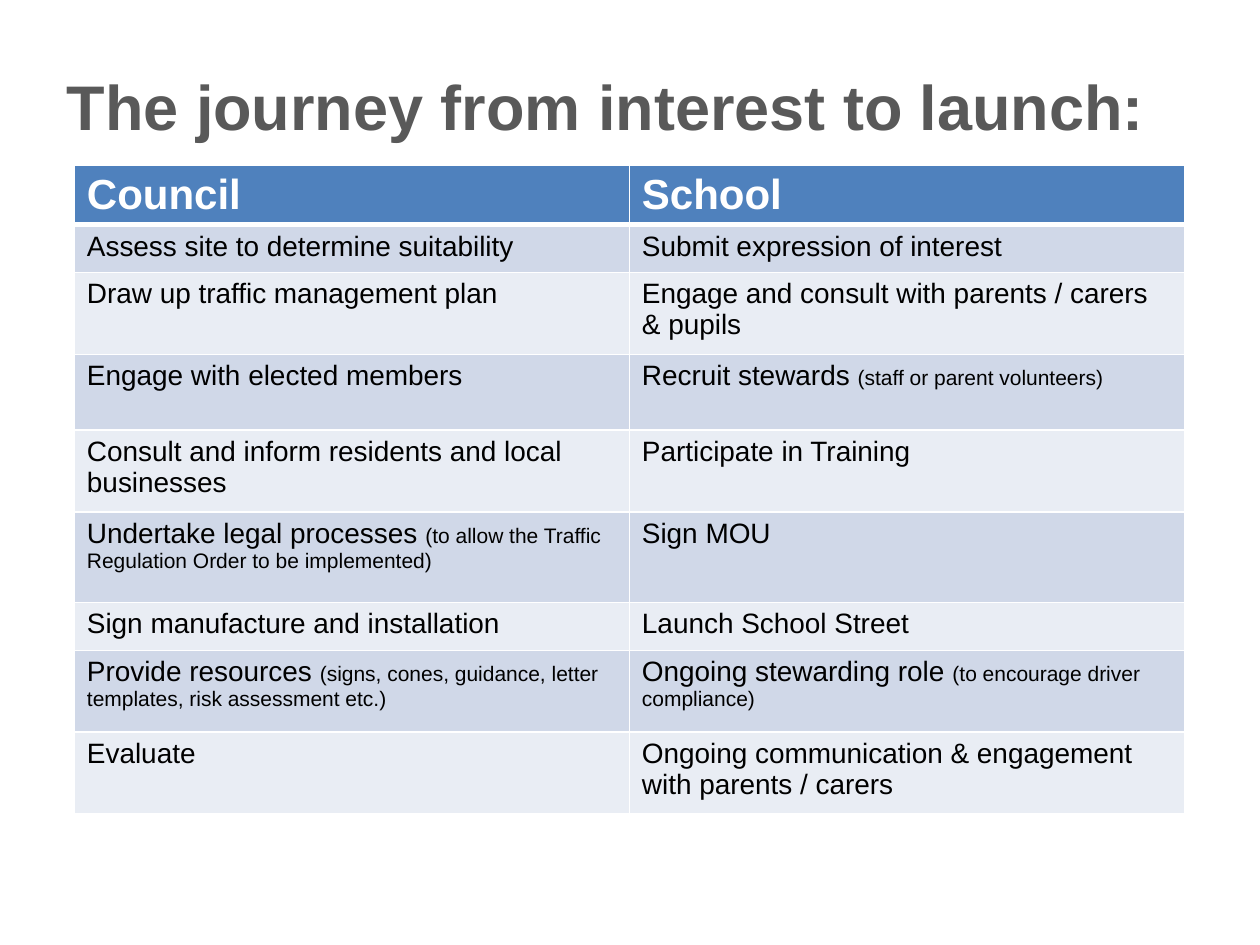
from lxml.etree import SubElement
from pptx import Presentation
from pptx.dml.color import RGBColor
from pptx.enum.text import MSO_ANCHOR, PP_ALIGN
from pptx.oxml.ns import qn
from pptx.util import Inches, Pt

FONT = "Arial"
GREY = RGBColor(0x59, 0x59, 0x59)
WHITE = RGBColor(0xFF, 0xFF, 0xFF)
BLACK = RGBColor(0x00, 0x00, 0x00)
HEADER_BLUE = RGBColor(0x4F, 0x81, 0xBD)
BANDS = (RGBColor(0xD0, 0xD8, 0xE8), RGBColor(0xE9, 0xED, 0xF4))

COLUMN_WIDTH = 4.405
# Row height, council step, school step; each step is (main text, small note)
HEADER = (0.46, ("Council", ""), ("School", ""))
STEPS = [
    (0.38, ("Assess site to determine suitability", ""),
     ("Submit expression of interest", "")),
    (0.65, ("Draw up traffic management plan", ""),
     ("Engage and consult with parents / carers & pupils", "")),
    (0.6, ("Engage with elected members", ""),
     ("Recruit stewards ", "(staff or parent volunteers)")),
    (0.65, ("Consult and inform residents and local businesses", ""),
     ("Participate in Training", "")),
    (0.72, ("Undertake legal processes ",
            "(to allow the Traffic Regulation Order to be implemented)"),
     ("Sign MOU", "")),
    (0.38, ("Sign manufacture and installation", ""),
     ("Launch School Street", "")),
    (0.65, ("Provide resources ",
            "(signs, cones, guidance, letter templates, risk assessment etc.)"),
     ("Ongoing stewarding role ", "(to encourage driver compliance)")),
    (0.65, ("Evaluate", ""),
     ("Ongoing communication & engagement with parents / carers", "")),
]


def style_font(font, size, color, bold):
    font.name = FONT
    font.size = Pt(size)
    font.bold = bold
    font.color.rgb = color


def add_title(page, text):
    title = page.shapes.title
    title.left, title.top = Inches(0.43), Inches(0.21)
    title.width, title.height = Inches(9.21), Inches(1.25)
    frame = title.text_frame
    frame.text = text
    frame.word_wrap = True
    frame.vertical_anchor = MSO_ANCHOR.MIDDLE
    paragraph = frame.paragraphs[0]
    paragraph.alignment = PP_ALIGN.LEFT
    style_font(paragraph.font, 36, GREY, True)


def set_borders(cell, bottom, top):
    """Draw white cell borders; they must precede the fill in the cell XML."""
    properties = cell._tc.get_or_add_tcPr()
    widths = {"a:lnL": 1, "a:lnR": 1, "a:lnT": top, "a:lnB": bottom}
    for tag, width in widths.items():
        line = SubElement(properties, qn(tag), w=str(Pt(width)))
        fill = SubElement(line, qn("a:solidFill"))
        SubElement(fill, qn("a:srgbClr"), val=str(WHITE))


def fill_cell(cell, step, color, size, text_color, bold, bottom=1, top=1):
    set_borders(cell, bottom, top)
    cell.fill.solid()
    cell.fill.fore_color.rgb = color
    main_text, note = step
    paragraph = cell.text_frame.paragraphs[0]
    paragraph.add_run().text = main_text
    style_font(paragraph.font, size, text_color, bold)
    if note:
        span = paragraph.add_run()
        span.text = note
        span.font.size = Pt(12)


def add_journey_table(page):
    rows = [HEADER] + STEPS
    height = sum(row[0] for row in rows)
    table = page.shapes.add_table(
        len(rows), 2, Inches(0.59), Inches(1.31),
        Inches(2 * COLUMN_WIDTH), Inches(height)).table
    for column in table.columns:
        column.width = Inches(COLUMN_WIDTH)
    for index, (row_height, *steps) in enumerate(rows):
        table.rows[index].height = Inches(row_height)
        for cell, step in zip(table.rows[index].cells, steps):
            if index == 0:
                fill_cell(cell, step, HEADER_BLUE, 24, WHITE, True, bottom=3)
            else:
                fill_cell(cell, step, BANDS[(index - 1) % 2], 16, BLACK, False,
                          top=3 if index == 1 else 1)


def main():
    deck = Presentation()
    deck.slide_width, deck.slide_height = Inches(10), Inches(7.5)
    page = deck.slides.add_slide(deck.slide_layouts[5])
    add_title(page, "The journey from interest to launch:")
    add_journey_table(page)
    deck.save("out.pptx")


if __name__ == "__main__":
    main()
